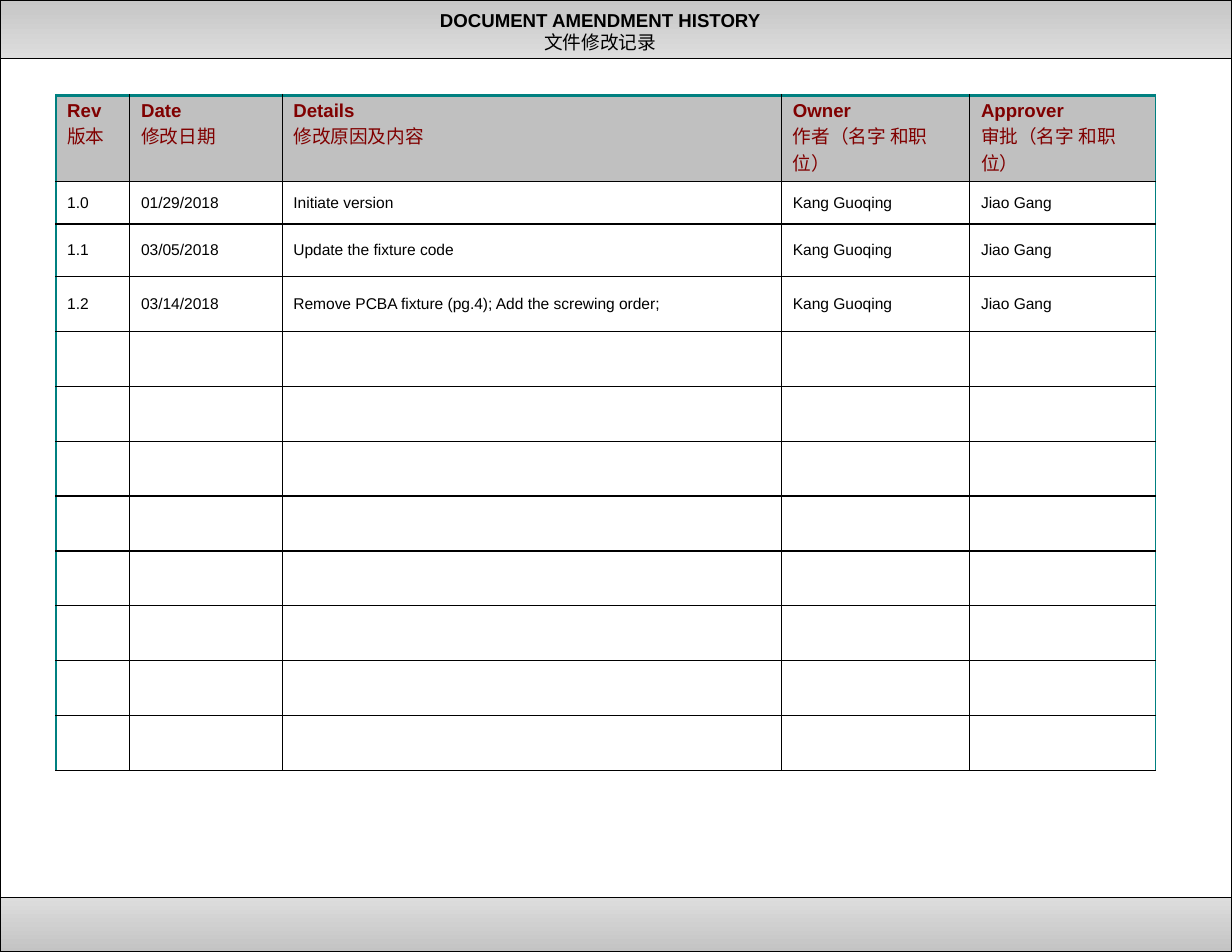
from dataclasses import dataclass

from lxml import etree
from pptx import Presentation
from pptx.dml.color import RGBColor
from pptx.enum.shapes import MSO_SHAPE
from pptx.enum.text import MSO_ANCHOR, PP_ALIGN
from pptx.oxml.ns import qn
from pptx.util import Inches, Pt

RECTANGLE = MSO_SHAPE.RECTANGLE
MIDDLE, TOP = MSO_ANCHOR.MIDDLE, MSO_ANCHOR.TOP
CENTER, LEFT = PP_ALIGN.CENTER, PP_ALIGN.LEFT

COLORS = {
    "black": "000000",
    "white": "FFFFFF",
    "maroon": "800000",
    "teal": "008080",
    "silver": "C0C0C0",
    "band_dark": "C6C6C6",
    "footer_dark": "C3C3C3",
    "band_light": "DDDDDD",
}
FONT = "Arial"
PAGE_WIDTH, PAGE_HEIGHT = 11, 8.5
EMPTY_ROWS = 8
ROW_HEIGHTS = [0.77, 0.38, 0.47, 0.49] + [0.49] * EMPTY_ROWS


@dataclass
class Column:
    heading: str
    translation: str
    width: float


@dataclass
class Band:
    top: float
    height: float
    top_color: str
    bottom_color: str


@dataclass
class Border:
    color: str
    width: float


COLUMNS = [
    Column("Rev", "版本", 0.66),
    Column("Date", "修改日期", 1.36),
    Column("Details", "修改原因及内容", 4.46),
    Column("Owner", "作者（名字 和职位）", 1.68),
    Column("Approver", "审批（名字 和职位）", 1.66),
]
REVISIONS = [
    ("1.0", "01/29/2018", "Initiate version"),
    ("1.1", "03/05/2018", "Update the fixture code"),
    ("1.2", "03/14/2018", "Remove PCBA fixture (pg.4); Add the screwing order;"),
]
OWNER, APPROVER = "Kang Guoqing", "Jiao Gang"
BANDS = [
    Band(8.01, 0.49, "band_light", "footer_dark"),
    Band(0, 0.52, "band_dark", "band_light"),
]


def rgb(name: str) -> RGBColor:
    return RGBColor.from_string(COLORS[name])


def write_text(frame, lines, size=10, color="black", bold_first=False,
               align=LEFT, line_spacing=None) -> None:
    """Write one paragraph per line, the first one bold if asked."""
    for index, line in enumerate(lines):
        para = frame.paragraphs[0] if index == 0 else frame.add_paragraph()
        para.alignment = align
        para.space_before = Pt(0)
        if line_spacing:
            para.line_spacing = Pt(line_spacing)
        span = para.add_run()
        span.text = line
        span.font.name = FONT
        span.font.size = Pt(size)
        span.font.bold = bold_first and index == 0
        span.font.color.rgb = rgb(color)


def add_page_rectangle(slide, top: float, height: float, line_width: float):
    box = slide.shapes.add_shape(
        RECTANGLE, 0, Inches(top), Inches(PAGE_WIDTH), Inches(height))
    box.shadow.inherit = False
    box.line.color.rgb = rgb("black")
    box.line.width = Pt(line_width)
    return box


def add_band(slide, band: Band) -> None:
    box = add_page_rectangle(slide, band.top, band.height, 0.75)
    box.fill.gradient()
    box.fill.gradient_angle = 270
    for stop, color in zip(box.fill.gradient_stops,
                           (band.top_color, band.bottom_color)):
        stop.color.rgb = rgb(color)


def set_borders(cell, borders: dict[str, Border]) -> None:
    properties = cell._tc.get_or_add_tcPr()
    for side, border in borders.items():
        line = etree.SubElement(properties, qn(f"a:ln{side}"),
                                w=str(Pt(border.width)))
        fill = etree.SubElement(line, qn("a:solidFill"))
        etree.SubElement(fill, qn("a:srgbClr"), val=COLORS[border.color])


def format_cell(cell, row: int, column: int) -> None:
    inner, outer = Border("black", 0.75), Border("teal", 1)
    rule = Border("black", 1)
    set_borders(cell, {
        "L": outer if column == 0 else inner,
        "R": outer if column == len(COLUMNS) - 1 else inner,
        "T": Border("teal", 2) if row == 0 else rule,
        "B": rule,
    })
    cell.fill.solid()
    cell.fill.fore_color.rgb = rgb("silver" if row == 0 else "white")
    cell.vertical_anchor = TOP if row == 0 else MIDDLE
    cell.margin_left = cell.margin_right = Inches(0.1)
    cell.margin_top = cell.margin_bottom = Inches(0.05)


def add_history_table(slide) -> None:
    width = sum(column.width for column in COLUMNS)
    table = slide.shapes.add_table(
        len(ROW_HEIGHTS), len(COLUMNS), Inches(0.5), Inches(0.85),
        Inches(width), Inches(sum(ROW_HEIGHTS))).table
    table.first_row = table.horz_banding = False

    for index, column in enumerate(COLUMNS):
        table.columns[index].width = Inches(column.width)
        write_text(table.cell(0, index).text_frame,
                   [column.heading, column.translation],
                   size=12, color="maroon", bold_first=True)
    for row, revision in enumerate(REVISIONS, start=1):
        for index, text in enumerate((*revision, OWNER, APPROVER)):
            write_text(table.cell(row, index).text_frame, [text])
    for row, height in enumerate(ROW_HEIGHTS):
        table.rows[row].height = Inches(height)
        for index in range(len(COLUMNS)):
            format_cell(table.cell(row, index), row, index)


def add_title(slide) -> None:
    title = slide.shapes.title
    title.left, title.top = Inches(3.82), Inches(0.03)
    title.width, title.height = Inches(3.08), Inches(0.5)
    title.text_frame.word_wrap = True
    title.text_frame.vertical_anchor = MIDDLE
    write_text(title.text_frame, ["DOCUMENT AMENDMENT HISTORY", "文件修改记录"],
               size=12, bold_first=True, align=CENTER, line_spacing=14)
    # The title placeholder comes first in the tree; lift it above the bands.
    slide.shapes._spTree.append(title._element)


def main() -> None:
    deck = Presentation()
    deck.slide_width, deck.slide_height = Inches(PAGE_WIDTH), Inches(PAGE_HEIGHT)
    slide = deck.slides.add_slide(deck.slide_layouts.get_by_name("Title Only"))
    for band in BANDS:
        add_band(slide, band)
    page_frame = add_page_rectangle(slide, 0, PAGE_HEIGHT, 1.5)
    page_frame.fill.background()
    add_title(slide)
    add_history_table(slide)
    deck.save("out.pptx")


if __name__ == "__main__":
    main()
